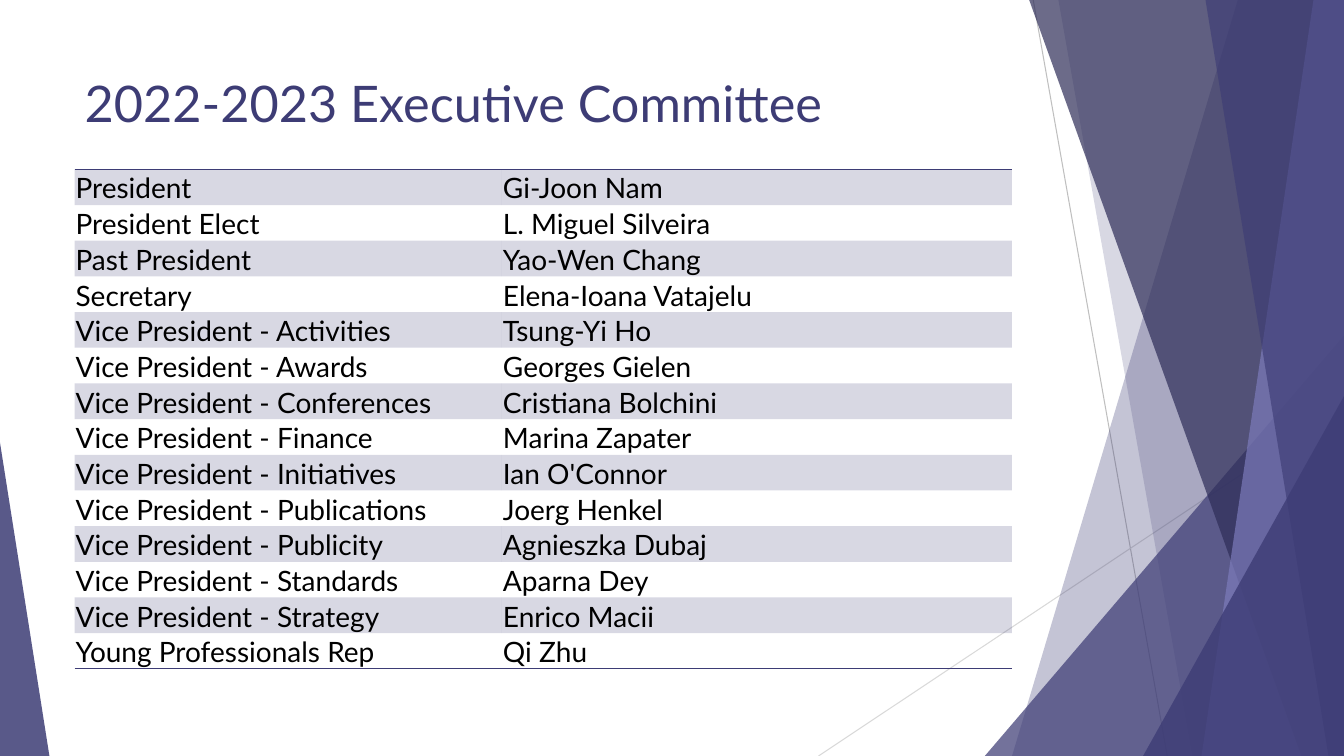
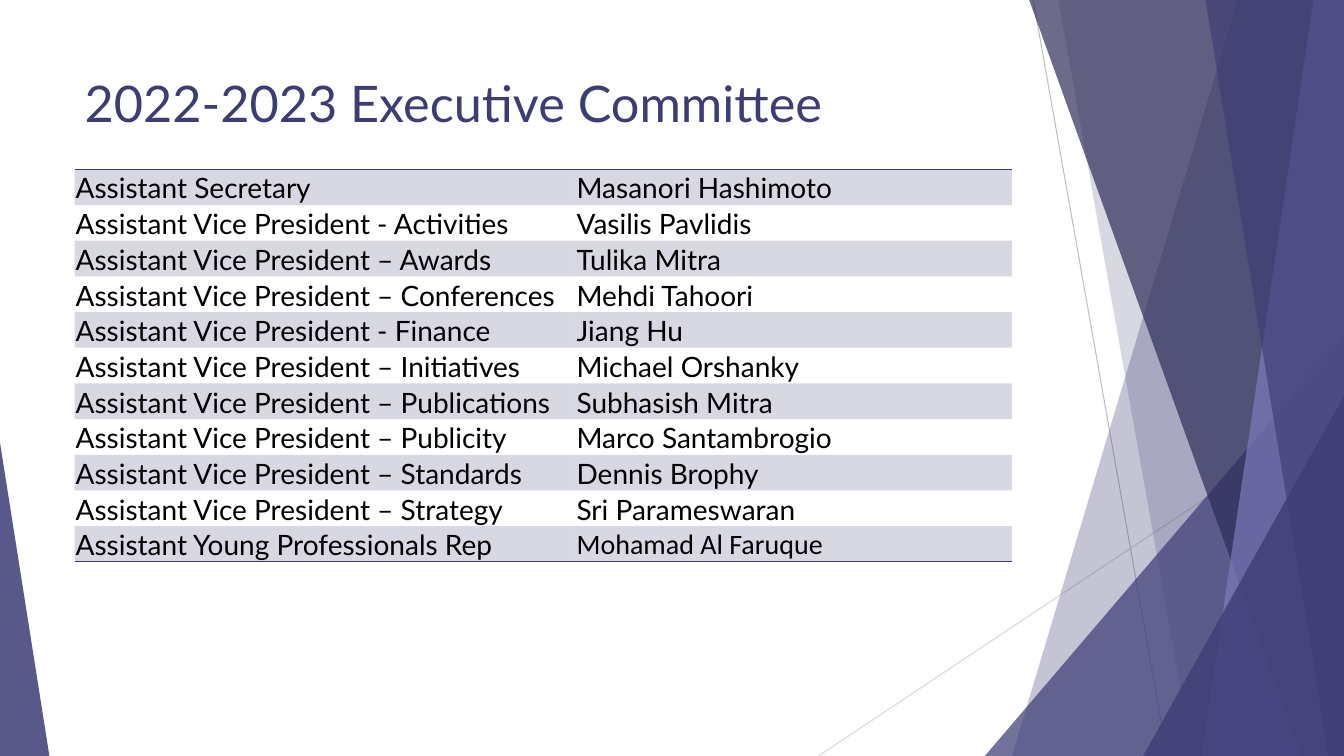
"""Build the two executive committee slides."""
from dataclasses import dataclass

from lxml import etree
from pptx import Presentation
from pptx.dml.color import RGBColor
from pptx.enum.shapes import MSO_CONNECTOR, MSO_SHAPE
from pptx.enum.text import MSO_ANCHOR, MSO_AUTO_SIZE, PP_ALIGN
from pptx.oxml.ns import qn
from pptx.util import Inches, Pt

STRAIGHT = MSO_CONNECTOR.STRAIGHT
TRIANGLE = MSO_SHAPE.ISOSCELES_TRIANGLE
TOP, BOTTOM = MSO_ANCHOR.TOP, MSO_ANCHOR.BOTTOM
LEFT = PP_ALIGN.LEFT
NO_AUTOFIT = MSO_AUTO_SIZE.NONE
TITLE_ONLY = 5
PLAIN_TABLE_STYLE = "{2D5ABB26-0587-4C30-8999-92F81FD0307C}"


@dataclass(frozen=True)
class Theme:
    """Colours, fonts, sizes and the slide's dimensions."""

    indigo: str = "3D3C75"
    midnight: str = "2E2D58"
    lavender: str = "7C7BBB"
    silver: str = "BFBFBF"
    mist: str = "D9D9D9"
    black: str = "000000"
    font: str = "Lato"
    alternate_font: str = "Calibri"
    title_size: int = 36
    table_size: int = 20
    hairline: float = 0.75
    rule: int = 1
    band_opacity: int = 20
    width: int = Inches(40 / 3)
    height: int = Inches(7.5)


THEME = Theme()
MARGIN = 5.55
TITLE_AREA = (MARGIN, 8.93, 70.5, 19.2)
TABLE_TOP, TABLE_WIDTH, ROW_HEIGHT = 22.4, 69.75, 4.72

OFFICERS = [
    ("President", "Gi-Joon Nam"),
    ("President Elect", "L. Miguel Silveira"),
    ("Past President", "Yao-Wen Chang"),
    ("Secretary", "Elena-Ioana Vatajelu"),
    ("Vice President - Activities", "Tsung-Yi Ho"),
    ("Vice President - Awards", "Georges Gielen"),
    ("Vice President - Conferences", "Cristiana Bolchini"),
    ("Vice President - Finance", "Marina Zapater"),
    ("Vice President - Initiatives", "Ian O'Connor"),
    ("Vice President - Publications", "Joerg Henkel"),
    ("Vice President - Publicity", "Agnieszka Dubaj"),
    ("Vice President - Standards", "Aparna Dey"),
    ("Vice President - Strategy", "Enrico Macii"),
    ("Young Professionals Rep", "Qi Zhu"),
]
ASSISTANTS = [
    ("Assistant Secretary", "Masanori Hashimoto"),
    ("Assistant Vice President - Activities", "Vasilis Pavlidis"),
    ("Assistant Vice President – Awards", "Tulika Mitra"),
    ("Assistant Vice President – Conferences", "Mehdi Tahoori"),
    ("Assistant Vice President - Finance", "Jiang Hu"),
    ("Assistant Vice President – Initiatives", "Michael Orshanky"),
    ("Assistant Vice President – Publications", "Subhasish Mitra"),
    ("Assistant Vice President – Publicity", "Marco Santambrogio"),
    ("Assistant Vice President – Standards", "Dennis Brophy"),
    ("Assistant Vice President – Strategy", "Sri Parameswaran"),
    ("Assistant Young Professionals Rep", "Mohamad Al Faruque"),
]


def across(percent):
    """Turn a percentage of the slide's width into a length."""
    return round(THEME.width * percent / 100)


def down(percent):
    """Turn a percentage of the slide's height into a length."""
    return round(THEME.height * percent / 100)


def apply_format(target, values):
    """Set each attribute named in values on the target."""
    for name, value in values.items():
        setattr(target, name, value)


def format_text(para, size, colour, font=THEME.font):
    """Left-align a paragraph and set its font."""
    para.alignment = LEFT
    apply_format(para.font, {"size": Pt(size), "name": font})
    para.font.color.rgb = RGBColor.from_string(colour)


def paint(fill, properties, colour, opacity):
    """Set a solid fill, held in properties, with a percentage of opacity."""
    fill.solid()
    fill.fore_color.rgb = RGBColor.from_string(colour)
    for tint in properties.iter(qn("a:srgbClr")):
        etree.SubElement(tint, qn("a:alpha"), val=str(opacity * 1000))


def finish_facet(shape, colour, opacity):
    """Fill a facet and clear its outline and shadow."""
    shape.shadow.inherit = False
    shape.line.fill.background()
    paint(shape.fill, shape.element.spPr, colour, opacity)


def add_wedge(shapes, top_left, bottom_left, colour, opacity):
    """Add a full-height facet that reaches the right edge."""
    outline = shapes.build_freeform(across(top_left), 0)
    corners = [(100, 0), (100, 100), (bottom_left, 100)]
    outline.add_line_segments([(across(x), down(y)) for x, y in corners])
    finish_facet(outline.convert_to_shape(), colour, opacity)


def add_corner(shapes, left, right, top, apex, opacity):
    """Add a right-angled facet that stands on the bottom edge."""
    shape = shapes.add_shape(TRIANGLE, across(left), down(top),
                             across(right - left), down(100 - top))
    shape.adjustments[0] = apex
    finish_facet(shape, THEME.indigo, opacity)


def add_hairline(shapes, start, end, colour):
    """Add a thin line between two points."""
    line = shapes.add_connector(STRAIGHT, across(start[0]), down(start[1]),
                                across(end[0]), down(end[1]))
    line.line.width = Pt(THEME.hairline)
    line.line.color.rgb = RGBColor.from_string(colour)
    etree.SubElement(line.element.spPr, qn("a:effectLst"))


def add_backdrop(slide):
    """Draw the facets once and hand them to the slide's layout."""
    layout = slide.slide_layout
    for holder in list(layout.placeholders)[1:]:
        layout.shapes.element.remove(holder.element)
    group = slide.shapes.add_group_shape()
    shapes = group.shapes
    add_hairline(shapes, (76.88, 0), (86.85, 100), THEME.silver)
    add_hairline(shapes, (100, 53.73), (60.9, 100), THEME.mist)
    add_wedge(shapes, 92.1, 75.3, THEME.indigo, 30)
    add_wedge(shapes, 78.75, 88.73, THEME.indigo, 20)
    add_corner(shapes, 73.28, 100, 44.4, 1, 72)
    add_wedge(shapes, 76.58, 96.83, THEME.midnight, 70)
    add_wedge(shapes, 97.73, 89.4, THEME.lavender, 70)
    add_wedge(shapes, 89.7, 98.85, THEME.indigo, 65)
    add_corner(shapes, 85.05, 100, 52.4, 1, 80)
    add_corner(shapes, 0, 3.68, 58.53, 0, 85)
    layout.shapes.element.append(group.element)


def add_title(slide, text):
    """Place and format the slide's title."""
    title = slide.shapes.title
    left, top, width, height = TITLE_AREA
    apply_format(title, {"left": across(left), "top": down(top),
                         "width": across(width), "height": down(height)})
    frame = title.text_frame
    frame.text = text
    apply_format(frame, {"vertical_anchor": TOP, "word_wrap": True,
                         "auto_size": NO_AUTOFIT})
    format_text(frame.paragraphs[0], THEME.title_size, THEME.indigo)


def add_border(cell, side):
    """Rule one side of a cell, given as lnT or lnB."""
    border = etree.Element(qn(f"a:{side}"), w=str(Pt(THEME.rule)))
    fill = etree.SubElement(border, qn("a:solidFill"))
    etree.SubElement(fill, qn("a:srgbClr"), val=THEME.indigo)
    cell._tc.get_or_add_tcPr().insert(0, border)


def fill_cell(cell, text, banded, font):
    """Write and format one table cell."""
    cell.text = text
    inset = Inches(0.01)
    apply_format(cell, {"vertical_anchor": BOTTOM, "margin_left": inset,
                        "margin_right": inset, "margin_top": inset,
                        "margin_bottom": 0})
    format_text(cell.text_frame.paragraphs[0], THEME.table_size,
                THEME.black, font)
    if banded:
        paint(cell.fill, cell._tc.get_or_add_tcPr(), THEME.indigo,
              THEME.band_opacity)
    else:
        cell.fill.background()


def add_roster(slide, members, role_width, alternate_names=()):
    """Add a banded table of roles and names."""
    frame = slide.shapes.add_table(
        len(members), 2, across(MARGIN), down(TABLE_TOP),
        across(TABLE_WIDTH), down(ROW_HEIGHT * len(members)))
    table = frame.table
    apply_format(table, {"first_row": False, "horz_banding": False})
    for style in frame.element.iter(qn("a:tableStyleId")):
        style.text = PLAIN_TABLE_STYLE
    for column, width in zip(table.columns,
                             (role_width, TABLE_WIDTH - role_width)):
        column.width = across(width)
    for index, member in enumerate(members):
        table.rows[index].height = down(ROW_HEIGHT)
        for cell, text in zip(table.rows[index].cells, member):
            font = (THEME.alternate_font if text in alternate_names
                    else THEME.font)
            fill_cell(cell, text, index % 2 == 0, font)
    for row, side in ((0, "lnT"), (len(members) - 1, "lnB")):
        for cell in table.rows[row].cells:
            add_border(cell, side)


def add_page(deck):
    """Add a titled slide."""
    page = deck.slides.add_slide(deck.slide_layouts[TITLE_ONLY])
    add_title(page, "2022-2023 Executive Committee")
    return page


def main():
    """Build and save the deck."""
    deck = Presentation()
    apply_format(deck, {"slide_width": THEME.width,
                        "slide_height": THEME.height})
    officers_page = add_page(deck)
    add_backdrop(officers_page)
    add_roster(officers_page, OFFICERS, 31.8)
    add_roster(add_page(deck), ASSISTANTS, 37.28, ("Mohamad Al Faruque",))
    deck.save("out.pptx")


if __name__ == "__main__":
    main()
